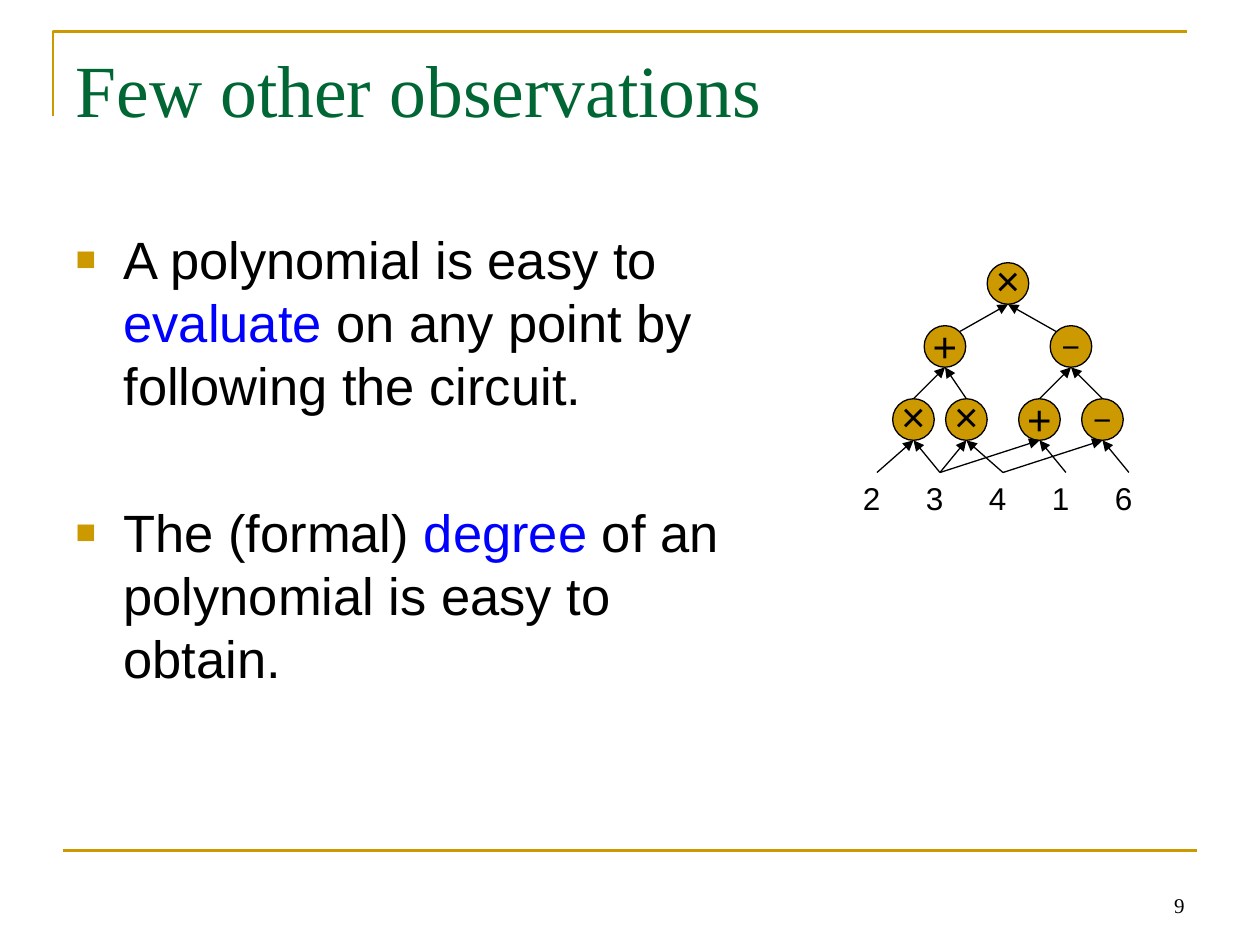
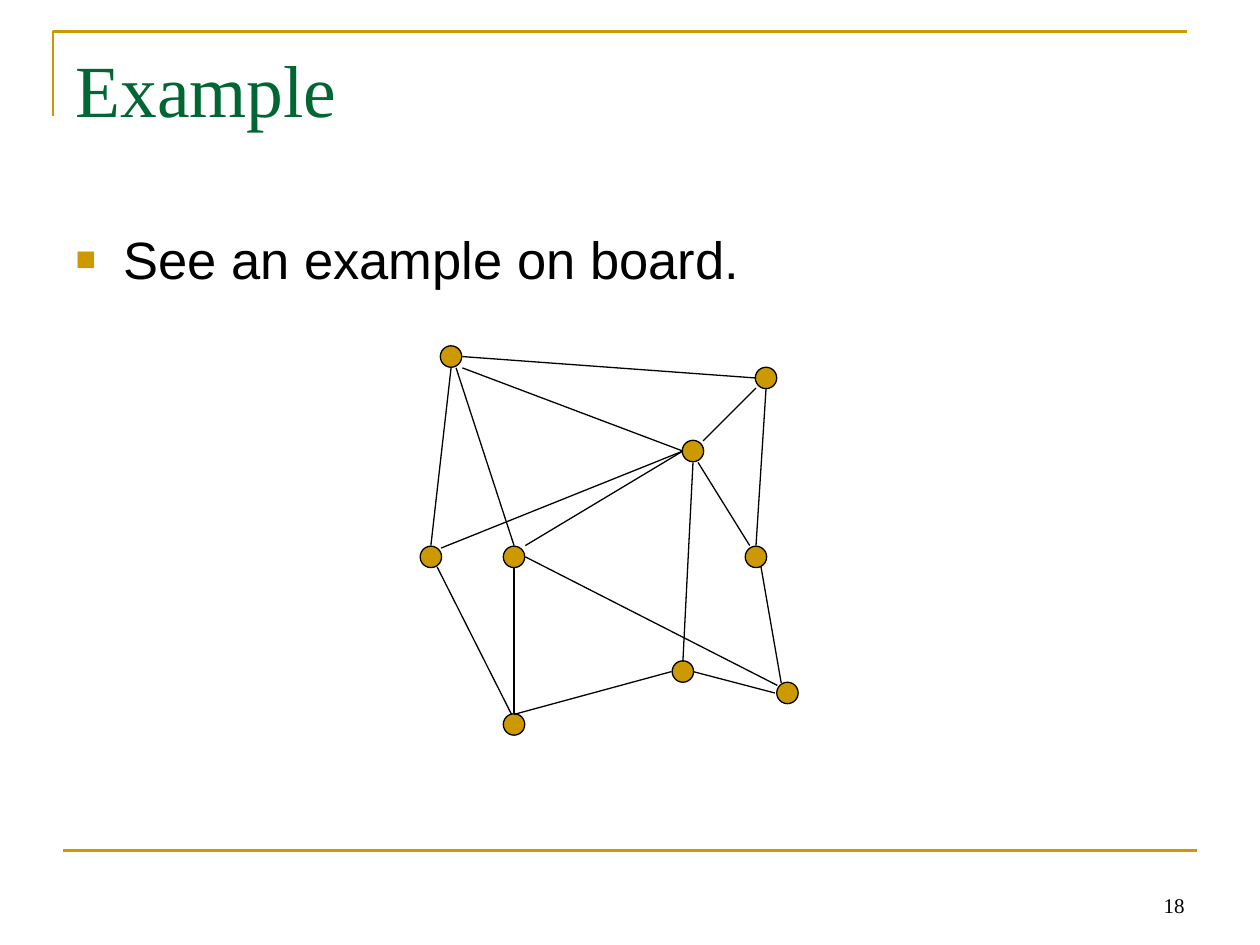
from lxml import etree
from pptx import Presentation
from pptx.dml.color import RGBColor
from pptx.enum.shapes import MSO_CONNECTOR, MSO_SHAPE
from pptx.enum.text import MSO_ANCHOR, PP_ALIGN
from pptx.oxml.ns import qn
from pptx.util import Cm, Pt

STRAIGHT = MSO_CONNECTOR.STRAIGHT
ELLIPSE = MSO_SHAPE.OVAL
TOP, MIDDLE, BOTTOM = MSO_ANCHOR.TOP, MSO_ANCHOR.MIDDLE, MSO_ANCHOR.BOTTOM
LEFT, CENTER, RIGHT = PP_ALIGN.LEFT, PP_ALIGN.CENTER, PP_ALIGN.RIGHT

GOLD, GREEN, BLUE, BLACK = "CC9900", "006633", "0000FF", "000000"
SERIF, SANS = "Times New Roman", "Arial"
TITLE_AND_CONTENT = 1


def color(value):
    return RGBColor.from_string(value)


def inches(value):
    return Cm(2.54 * value)


class Deck:
    def __init__(self):
        self.presentation = Presentation()
        self.presentation.slide_width = inches(10)
        self.presentation.slide_height = inches(7.5)
        self.slide = None

    def new_slide(self, title, number):
        layout = self.presentation.slide_layouts[TITLE_AND_CONTENT]
        self.slide = self.presentation.slides.add_slide(layout)
        self.frame()
        shape = self.slide.shapes.title
        self.place(shape, 0.5, 0.3, 9, 1.25)
        shape.text_frame.vertical_anchor = TOP
        self.set_runs(shape.text_frame.paragraphs[0], [(title, None)], 42, SERIF, GREEN)
        self.text(str(number), 7.17, 6.83, 2.33, 0.5, 12, SERIF, RIGHT, BOTTOM)

    def frame(self):
        builder = self.slide.shapes.build_freeform(inches(0.42), inches(0.92))
        corner = [(inches(0.42), inches(0.25)), (inches(9.42), inches(0.25))]
        builder.add_line_segments(corner, close=False)
        shape = builder.convert_to_shape()
        shape.shadow.inherit = False
        shape.fill.background()
        self.outline(shape, GOLD, 1.5)
        self.line((0.5, 6.75), (9.5, 6.75), GOLD, 1.5)

    def place(self, shape, left, top, width, height):
        shape.left, shape.top = inches(left), inches(top)
        shape.width, shape.height = inches(width), inches(height)

    def outline(self, shape, line_color, width):
        shape.line.color.rgb = color(line_color)
        shape.line.width = Pt(width)

    def set_runs(self, paragraph, runs, size, font, text_color=BLACK, alignment=LEFT):
        paragraph.alignment = alignment
        paragraph.font.size = Pt(size)
        paragraph.font.name = font
        paragraph.font.color.rgb = color(text_color)
        for content, run_color in runs:
            run = paragraph.add_run()
            run.text = content
            if run_color:
                run.font.color.rgb = color(run_color)

    def bullets(self, items, width):
        shape = self.slide.placeholders[1]
        self.place(shape, 0.5, 1.75, width, 4.95)
        frame = shape.text_frame
        for index, runs in enumerate(items):
            paragraph = frame.add_paragraph() if index else frame.paragraphs[0]
            self.square_bullet(paragraph)
            paragraph.space_before = Pt(48 if index else 6)
            self.set_runs(paragraph, runs, 30, SANS)

    def square_bullet(self, paragraph):
        properties = paragraph._p.get_or_add_pPr()
        properties.set("marL", str(inches(0.38)))
        properties.set("indent", str(-inches(0.38)))
        bullet_color = etree.SubElement(properties, qn("a:buClr"))
        etree.SubElement(bullet_color, qn("a:srgbClr"), val=GOLD)
        etree.SubElement(properties, qn("a:buSzPct"), val="65000")
        etree.SubElement(properties, qn("a:buFont"), typeface=SANS)
        etree.SubElement(properties, qn("a:buChar"), char="■")

    def text(self, content, left, top, width, height, size, font,
             alignment=LEFT, anchor=TOP):
        box = self.slide.shapes.add_textbox(
            inches(left), inches(top), inches(width), inches(height))
        box.text_frame.word_wrap = True
        box.text_frame.vertical_anchor = anchor
        self.set_runs(box.text_frame.paragraphs[0], [(content, None)], size, font,
                      alignment=alignment)

    def circle(self, center, diameter, symbol=None, size=24, lift=0):
        x, y = center
        shape = self.slide.shapes.add_shape(
            ELLIPSE, inches(x - diameter / 2), inches(y - diameter / 2),
            inches(diameter), inches(diameter))
        shape.shadow.inherit = False
        shape.fill.solid()
        shape.fill.fore_color.rgb = color(GOLD)
        self.outline(shape, BLACK, 0.75)
        if symbol:
            frame = shape.text_frame
            frame.word_wrap = False
            frame.vertical_anchor = MIDDLE
            frame.margin_left = frame.margin_right = frame.margin_top = 0
            frame.margin_bottom = Pt(lift)
            self.set_runs(frame.paragraphs[0], [(symbol, None)], size, SANS,
                          alignment=CENTER)

    def line(self, start, end, line_color=BLACK, width=0.75, arrow=False):
        connector = self.slide.shapes.add_connector(
            STRAIGHT, *(inches(value) for value in (*start, *end)))
        self.outline(connector, line_color, width)
        properties = connector._element.spPr
        if arrow:
            etree.SubElement(properties.find(qn("a:ln")), qn("a:tailEnd"),
                             type="triangle")
        etree.SubElement(properties, qn("a:effectLst"))


def draw_circuit(deck):
    diameter = 0.33
    radius = diameter / 2
    diagonal = 0.12
    symbol_styles = {"×": (24, 4.6), "+": (24, 1.2), "−": (18, 1.2)}
    root, plus, minus = (8, 2.25), (7.5, 2.75), (8.5, 2.75)
    leaves = [(x, 3.33) for x in (7.25, 7.67, 8.25, 8.75)]
    gates = zip([root, plus, minus, *leaves], "×+−××+−")
    for center, symbol in gates:
        deck.circle(center, diameter, symbol, *symbol_styles[symbol])

    def wire(start, gate):
        deck.line(start, (gate[0], gate[1] + radius), arrow=True)

    wire((plus[0] + diagonal, plus[1] - diagonal), root)
    wire((minus[0] - diagonal, minus[1] - diagonal), root)
    for leaf, parent in zip(leaves, (plus, plus, minus, minus)):
        wire((leaf[0], leaf[1] - radius), parent)

    for index, value in enumerate("23416"):
        deck.text(value, 6.75 + 0.5 * index, 3.75, 0.34, 0.4, 18, SANS)
    leaf_inputs = [(0, 1), (1, 2), (1, 3), (2, 4)]
    for leaf, inputs in zip(leaves, leaf_inputs):
        for index in inputs:
            wire((6.96 + 0.5 * index, 3.75), leaf)


def draw_graph(deck):
    nodes = [
        (3.58, 2.83), (6.08, 3), (6, 4.42), (4.08, 5.75), (4.08, 4.42),
        (5.42, 5.33), (5.5, 3.58), (3.42, 4.42), (6.25, 5.5),
    ]
    edges = [
        ((3.62, 2.92), (4.08, 4.33)), ((4.08, 4.5), (4.08, 5.67)),
        ((3.47, 4.5), (4.06, 5.67)), ((5.42, 5.25), (5.5, 3.67)),
        ((5.58, 3.5), (6, 3.08)), ((5.54, 3.67), (5.95, 4.33)),
        ((5.5, 5.33), (6.15, 5.5)), ((4.17, 4.42), (6.17, 5.44)),
        ((4.17, 4.33), (5.42, 3.58)), ((6, 4.33), (6.08, 3.08)),
        ((6.04, 4.5), (6.2, 5.42)), ((3.5, 4.35), (5.42, 3.58)),
        ((3.67, 2.92), (5.42, 3.58)), ((3.58, 2.92), (3.42, 4.33)),
        ((3.67, 2.83), (6, 3)), ((4.08, 5.67), (5.33, 5.33)),
    ]
    for center in nodes:
        deck.circle(center, 0.17)
    for start, end in edges:
        deck.line(start, end)


def main():
    deck = Deck()
    deck.new_slide("Few other observations", 9)
    deck.bullets([
        [("A polynomial is easy to ", None), ("evaluate", BLUE),
         (" on any point by following the circuit.", None)],
        [("The (formal) ", None), ("degree", BLUE),
         (" of an polynomial is easy to obtain.", None)],
    ], 5.67)
    draw_circuit(deck)

    deck.new_slide("Example", 18)
    deck.bullets([[("See an example on board.", None)]], 9)
    draw_graph(deck)
    deck.presentation.save("out.pptx")


if __name__ == "__main__":
    main()
